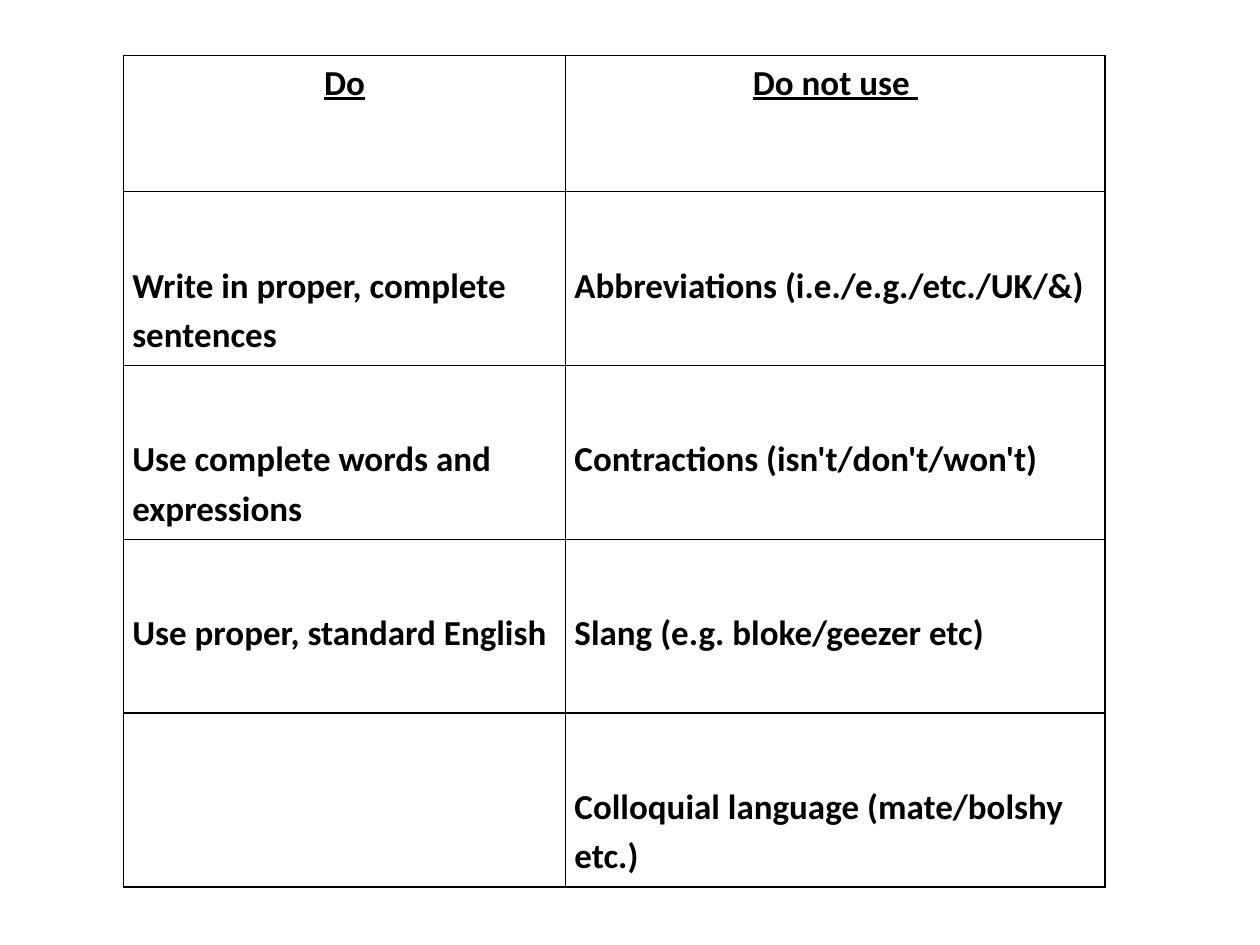
from pptx import Presentation
from pptx.dml.color import RGBColor
from pptx.enum.text import PP_ALIGN as Align
from pptx.oxml import parse_xml
from pptx.oxml.ns import nsdecls
from pptx.util import Inches, Pt

BLACK = "000000"


def color(hex_value):
    return RGBColor.from_string(hex_value)


def add_borders(cell, hex_value, points):
    for side in ("lnL", "lnR", "lnT", "lnB"):
        cell._tc.get_or_add_tcPr().append(parse_xml(
            f'<a:{side} {nsdecls("a")} w="{Pt(points)}">'
            f'<a:solidFill><a:srgbClr val="{hex_value}"/></a:solidFill>'
            f'<a:prstDash val="solid"/></a:{side}>'))


rows = [
    ("Do", "Do not use "),
    ("Write in proper, complete sentences", "Abbreviations (i.e./e.g./etc./UK/&)"),
    ("Use complete words and expressions", "Contractions (isn't/don't/won't)"),
    ("Use proper, standard English", "Slang (e.g. bloke/geezer etc)"),
    ("", "Colloquial language (mate/bolshy etc.)"),
]
column_widths = (3.51, 4.28)
header_height, body_height = 1.08, 1.38

deck = Presentation()
deck.slide_width, deck.slide_height = Inches(10), Inches(7.5)
page = deck.slides.add_slide(deck.slide_layouts[6])

# Table grid
table = page.shapes.add_table(
    len(rows), len(column_widths), Inches(0.98), Inches(0.44),
    Inches(sum(column_widths)),
    Inches(header_height + body_height * (len(rows) - 1))).table
table.first_row = False
table.horz_banding = False
for column, width in zip(table.columns, column_widths):
    column.width = Inches(width)

# Cells: centred underlined headings, then advice set lower in each row
for row_index, texts in enumerate(rows):
    is_header = row_index == 0
    table.rows[row_index].height = Inches(header_height if is_header else body_height)
    for column_index, text in enumerate(texts):
        cell = table.cell(row_index, column_index)
        add_borders(cell, BLACK, 1)
        cell.fill.background()
        cell.margin_left = cell.margin_right = Inches(0.07)
        cell.margin_top = Inches(0 if is_header else 0.53)
        cell.margin_bottom = Inches(0)

        para = cell.text_frame.paragraphs[0]
        para.text = text
        para.alignment = Align.CENTER if is_header else Align.LEFT
        para.line_spacing = 1.15
        para.space_after = Pt(10)
        para.font.name = "Calibri"
        para.font.size = Pt(20)
        para.font.bold = True
        para.font.underline = is_header
        para.font.color.rgb = color(BLACK)

deck.save("out.pptx")
